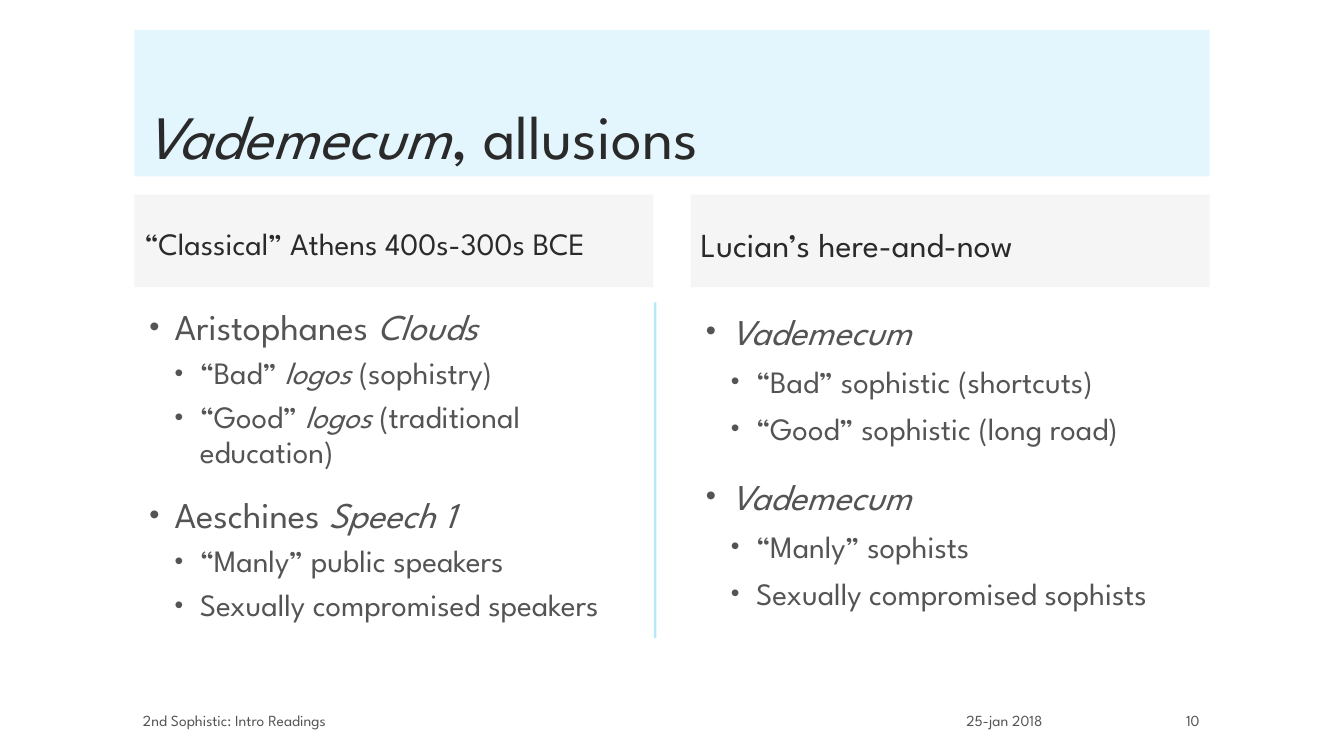
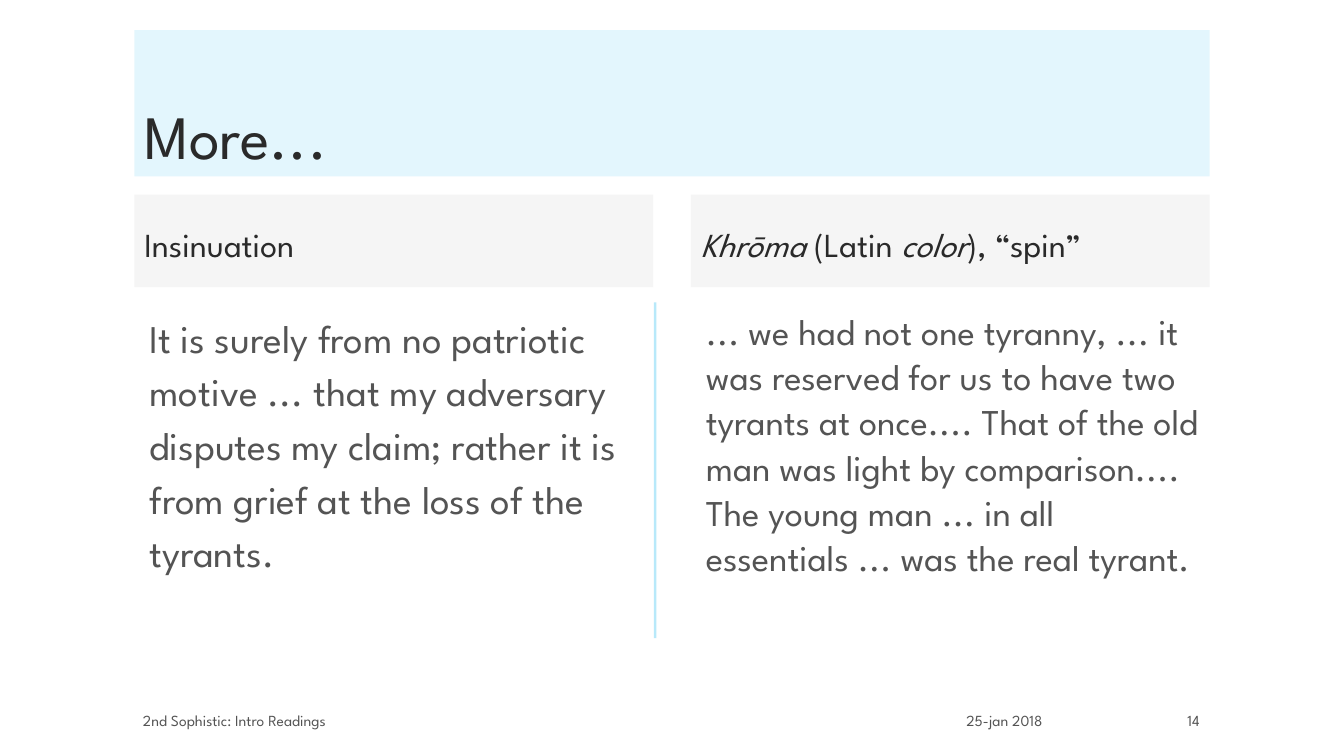
import dataclasses

import lxml.etree
import pptx
import pptx.dml.color
import pptx.enum.shapes
import pptx.enum.text
import pptx.oxml
import pptx.oxml.ns
import pptx.util

ANCHOR = pptx.enum.text.MSO_ANCHOR
ALIGN = pptx.enum.text.PP_ALIGN
qn = pptx.oxml.ns.qn


@dataclasses.dataclass(frozen=True)
class Theme:
    font: str = "League Spartan"
    accent: str = "00B0F0"
    grey: str = "BFBFBF"
    dark: str = "2A2A2A"
    text: str = "545454"
    title_alpha: int = 11
    heading_alpha: int = 15
    divider_alpha: int = 28
    title_size: float = 44
    heading_size: float = 24
    quote_size: float = 28
    body_size: float = 25.9
    sub_size: float = 22.2
    footer_size: float = 11
    loose: float = 1.14
    medium: float = 1.04
    tight: float = 0.94


class Deck:
    MARGIN, WIDTH, COLUMN = 10, 80, 38.6
    COLUMNS = (MARGIN, MARGIN + WIDTH - COLUMN)

    def __init__(self, theme):
        self.theme = theme
        self.prs = pptx.Presentation()
        self.prs.slide_width = pptx.util.Inches(13.33)
        self.prs.slide_height = pptx.util.Inches(7.5)
        self.slide = None

    def x(self, percent):
        return round(self.prs.slide_width * percent / 100)

    def y(self, percent):
        return round(self.prs.slide_height * percent / 100)

    def box(self, left, top, width, height):
        return self.x(left), self.y(top), self.x(width), self.y(height)

    def set_alpha(self, element, percent):
        color = element.find(qn("a:solidFill"))[0]
        lxml.etree.SubElement(color, qn("a:alpha"), val=str(percent * 1000))

    def add_text(self, p, text, size, color, spacing=1.0):
        p.line_spacing = spacing
        for i, part in enumerate(text.split("*")):
            if part:
                r = p.add_run()
                r.text = part
                r.font.name = self.theme.font
                r.font.size = pptx.util.Pt(size)
                r.font.italic = i % 2 == 1
                r.font.color.rgb = pptx.dml.color.RGBColor.from_string(color)

    def band(self, box, fill, alpha, text, size, anchor):
        sp = self.slide.shapes.add_shape(
            pptx.enum.shapes.MSO_SHAPE.RECTANGLE, *self.box(*box))
        sp.shadow.inherit = False
        sp.fill.solid()
        sp.fill.fore_color.rgb = pptx.dml.color.RGBColor.from_string(fill)
        self.set_alpha(sp.element.spPr, alpha)
        sp.line.fill.background()
        tf = sp.text_frame
        tf.word_wrap = True
        tf.vertical_anchor = anchor
        p = tf.paragraphs[0]
        p.alignment = ALIGN.LEFT
        self.add_text(p, text, size, self.theme.dark, self.theme.loose)

    def title(self, text):
        t = self.theme
        self.band((self.MARGIN, 4, self.WIDTH, 19.33), t.accent,
                  t.title_alpha, text, t.title_size, ANCHOR.BOTTOM)

    def heading(self, column, text, size=None):
        t = self.theme
        self.band((self.COLUMNS[column], 25.73, self.COLUMN, 12.27), t.grey,
                  t.heading_alpha, text, size or t.heading_size, ANCHOR.MIDDLE)

    def divider(self):
        x = self.x(48.75)
        line = self.slide.shapes.add_connector(
            pptx.enum.shapes.MSO_CONNECTOR.STRAIGHT, x, self.y(40), x, self.y(84.4))
        line.line.width = pptx.util.Pt(1.75)
        line.line.color.rgb = pptx.dml.color.RGBColor.from_string(self.theme.accent)
        spPr = line.element.spPr
        self.set_alpha(spPr.find(qn("a:ln")), self.theme.divider_alpha)
        lxml.etree.SubElement(spPr, qn("a:effectLst"))

    def textbox(self, *box):
        tf = self.slide.shapes.add_textbox(*self.box(*box)).text_frame
        tf.word_wrap = True
        return tf

    def body(self, column):
        return self.textbox(self.COLUMNS[column], 40, self.COLUMN, 50)

    def indent(self, p, left, first):
        pPr = p._p.get_or_add_pPr()
        pPr.set("marL", str(pptx.util.Inches(left)))
        pPr.set("indent", str(pptx.util.Inches(first)))
        return pPr

    def bullet(self, p, level):
        pPr = self.indent(p, 0.3 + 0.25 * level, -0.25)
        color = lxml.etree.SubElement(pPr, qn("a:buClr"))
        lxml.etree.SubElement(color, qn("a:srgbClr"), val=self.theme.text)
        lxml.etree.SubElement(pPr, qn("a:buSzPct"), val="80000")
        lxml.etree.SubElement(pPr, qn("a:buFont"), typeface="Arial")
        lxml.etree.SubElement(pPr, qn("a:buChar"), char="•")

    def bullets(self, column, items, spacing):
        t = self.theme
        tf = self.body(column)
        for i, (level, text) in enumerate(items):
            p = tf.add_paragraph() if i else tf.paragraphs[0]
            p.level = level
            p.space_before = pptx.util.Pt(6 if level else 18)
            self.add_text(p, text, t.sub_size if level else t.body_size, t.text, spacing)
            self.bullet(p, level)

    def quote(self, column, text, size, spacing):
        p = self.body(column).paragraphs[0]
        p.space_before = pptx.util.Pt(18)
        self.add_text(p, text, size, self.theme.text, spacing)
        self.indent(p, 0.05, 0)

    def footer(self, number):
        for left, width, align, text in (
            (9.9, 54.46, ALIGN.LEFT, "2nd Sophistic: Intro Readings"),
            (66.84, 11.48, ALIGN.RIGHT, "25-jan 2018"),
            (80.64, 9.36, ALIGN.RIGHT, str(number)),
        ):
            tf = self.textbox(left, 94, width, 2.67)
            tf.vertical_anchor = ANCHOR.MIDDLE
            p = tf.paragraphs[0]
            p.alignment = align
            self.add_text(p, text, self.theme.footer_size, self.theme.text)

    def new_slide(self, title, number):
        self.slide = self.prs.slides.add_slide(self.prs.slide_layouts[6])
        self.divider()
        self.title(title)
        self.footer(number)


def main():
    theme = Theme()
    deck = Deck(theme)

    deck.new_slide("*Vademecum*, allusions", 10)
    deck.heading(0, "“Classical” Athens 400s-300s BCE", theme.sub_size)
    deck.bullets(0, [
        (0, "Aristophanes *Clouds*"),
        (1, "“Bad” *logos* (sophistry)"),
        (1, "“Good” *logos* (traditional education)"),
        (0, "Aeschines *Speech 1*"),
        (1, "“Manly” public speakers"),
        (1, "Sexually compromised speakers"),
    ], theme.tight)
    deck.heading(1, "Lucian’s here-and-now")
    deck.bullets(1, [
        (0, "*Vademecum*"),
        (1, "“Bad” sophistic (shortcuts)"),
        (1, "“Good” sophistic (long road)"),
        (0, "*Vademecum*"),
        (1, "“Manly” sophists"),
        (1, "Sexually compromised sophists"),
    ], theme.medium)

    deck.new_slide("More...", 14)
    deck.heading(0, "Insinuation")
    deck.quote(0, "It is surely from no patriotic motive ... that my adversary "
               "disputes my claim; rather it is from grief at the loss of the "
               "tyrants.", theme.quote_size, theme.loose)
    deck.heading(1, "*Khrōma* (Latin *color*), “spin”")
    deck.quote(1, "... we had not one tyranny, ... it was reserved for us to have "
               "two tyrants at once.... That of the old man was light by "
               "comparison.... The young man ... in all essentials ... was the "
               "real tyrant.", theme.body_size, theme.medium)

    deck.prs.save("out.pptx")


if __name__ == "__main__":
    main()
